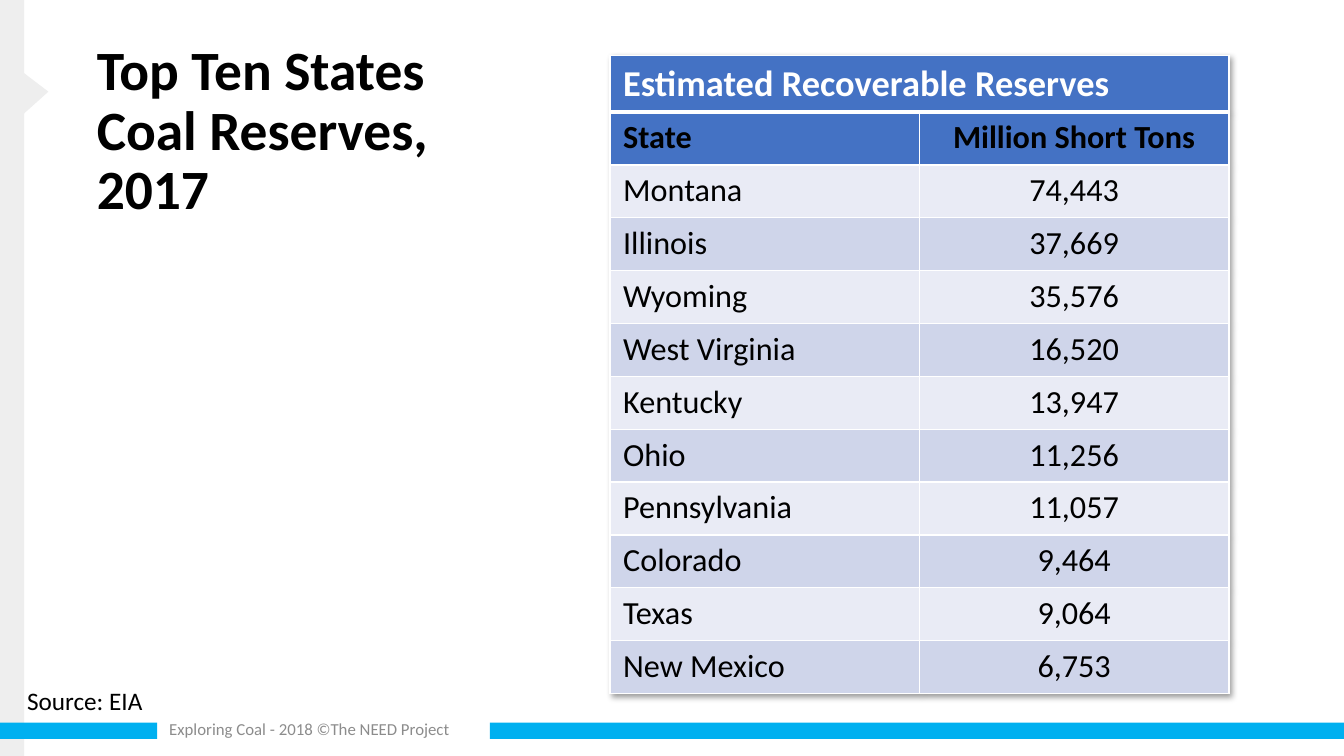
from lxml import etree
from pptx import Presentation, util as u
from pptx.dml.color import RGBColor
from pptx.enum import shapes, text
from pptx.oxml import parse_xml
from pptx.oxml.ns import nsdecls, qn

WIDTH, HEIGHT = 13.33, 7.5
BAR_TOP, BAR_HEIGHT = 7.17, 0.16
GREY, CYAN, BLUE, WHITE, BLACK = "EEEEEE", "00B0F0", "4472C4", "FFFFFF", "000000"
BANDS = ("E9EBF5", "CFD5EA")
LEFT, CENTER = text.PP_ALIGN.LEFT, text.PP_ALIGN.CENTER
TOP, MIDDLE = text.MSO_ANCHOR.TOP, text.MSO_ANCHOR.MIDDLE

RESERVES = [
    ("Montana", "74,443"),
    ("Illinois", "37,669"),
    ("Wyoming", "35,576"),
    ("West Virginia", "16,520"),
    ("Kentucky", "13,947"),
    ("Ohio", "11,256"),
    ("Pennsylvania", "11,057"),
    ("Colorado", "9,464"),
    ("Texas", "9,064"),
    ("New Mexico", "6,753"),
]


def color(value):
    return RGBColor.from_string(value)


def inches(*lengths):
    return [u.Inches(length) for length in lengths]


def write(frame, words, size, ink=BLACK, bold=False, align=LEFT, spacing=1.0):
    frame.text = words
    paragraph = frame.paragraphs[0]
    paragraph.alignment = align
    paragraph.line_spacing = spacing
    font = paragraph.runs[0].font
    font.name, font.size, font.bold = "Calibri", u.Pt(size), bold
    font.color.rgb = color(ink)


def paint(shape, fill):
    shape.shadow.inherit = False
    shape.fill.solid()
    shape.fill.fore_color.rgb = color(fill)
    shape.line.fill.background()


def add_side_strip(slide, left, top, width, height):
    """Grey edge strip with a pointer towards the title."""
    strip = slide.shapes.add_shape(
        shapes.MSO_SHAPE.RECTANGLE, *inches(left, top, width, height))
    paint(strip, GREY)
    base, tip = left + 0.1, left + 2 * width
    outline = slide.shapes.build_freeform(*inches(base, top + 1.25), scale=1.0)
    outline.add_line_segments(
        [inches(base, top + 0.62), inches(tip, top + 0.91)], close=True)
    paint(outline.convert_to_shape(), GREY)


def add_label(slide, words, left, top, width, height, anchor=TOP, wrap=True, **style):
    frame = slide.shapes.add_textbox(*inches(left, top, width, height)).text_frame
    frame.word_wrap = wrap
    frame.vertical_anchor = anchor
    write(frame, words, **style)


def add_footer(slide, left, width):
    """Cyan bars on both sides of the footer text."""
    gap_end = left + width
    for start, end in ((0, left - 0.02), (gap_end, WIDTH)):
        bar = slide.shapes.add_shape(
            shapes.MSO_SHAPE.RECTANGLE,
            *inches(start, BAR_TOP, end - start, BAR_HEIGHT))
        paint(bar, CYAN)
    add_label(slide, "Exploring Coal - 2018 ©The NEED Project",
              left, 7.03, width, 0.4, anchor=MIDDLE, size=12, ink="8C8C8C")


def set_title(slide, words, left, top, width, height):
    title = slide.shapes.title
    title.left, title.top, title.width, title.height = inches(left, top, width, height)
    frame = title.text_frame
    frame.word_wrap = True
    frame.auto_size = text.MSO_AUTO_SIZE.NONE
    frame.vertical_anchor = MIDDLE
    write(frame, words, 39.6, bold=True, spacing=0.9)


def set_borders(cell, **points):
    properties = cell._tc.get_or_add_tcPr()
    for side in "LRTB":
        line = etree.SubElement(properties, qn(f"a:ln{side}"),
                                w=str(u.Pt(points.get(side, 1))))
        fill = etree.SubElement(line, qn("a:solidFill"))
        etree.SubElement(fill, qn("a:srgbClr"), val=WHITE)


def fill_cell(cell, words, fill, borders, **style):
    cell.margin_left = cell.margin_right = u.Inches(0.13)
    cell.margin_top = cell.margin_bottom = u.Inches(0.06)
    set_borders(cell, **borders)
    cell.fill.solid()
    cell.fill.fore_color.rgb = color(fill)
    if words:
        write(cell.text_frame, words, **style)


def add_table_shadow(table):
    table._tbl.tblPr.insert(0, parse_xml(
        f'<a:effectLst {nsdecls("a")}>'
        '<a:outerShdw blurRad="50800" dist="38100" dir="2700000" algn="tl" rotWithShape="0">'
        '<a:srgbClr val="000000"><a:alpha val="40000"/></a:srgbClr>'
        '</a:outerShdw></a:effectLst>'))


def add_reserves_table(slide, left, top, width, height, heading_height=0.56):
    rows = [("Estimated Recoverable Reserves", ""),
            ("State", "Million Short Tons"), *RESERVES]
    table = slide.shapes.add_table(
        len(rows), 2, *inches(left, top, width, height)).table
    table.first_row = table.horz_banding = False
    add_table_shadow(table)
    for column in table.columns:
        column.width = u.Inches(width / 2)
    row_height = (height - heading_height) / (len(rows) - 1)
    for r, row in enumerate(rows):
        table.rows[r].height = u.Inches(row_height if r else heading_height)
        fill = BLUE if r < 2 else BANDS[r % 2]
        borders = {0: {"B": 3}, 1: {"T": 3}}.get(r, {})
        for c, words in enumerate(row):
            fill_cell(table.cell(r, c), words, fill, borders,
                      size=23 if r else 26, ink=BLACK if r else WHITE,
                      bold=r < 2, align=CENTER if c else LEFT)
    table.cell(0, 0).merge(table.cell(0, 1))


def main():
    deck = Presentation()
    deck.slide_width, deck.slide_height = inches(WIDTH, HEIGHT)
    slide = deck.slides.add_slide(deck.slide_layouts.get_by_name("Title Only"))
    add_side_strip(slide, 0, 0, 0.24, HEIGHT)
    set_title(slide, "Top Ten States Coal Reserves, 2017", 0.86, 0.55, 3.99, 1.52)
    add_reserves_table(slide, 6.05, 0.55, 6.14, 6.33)
    add_label(slide, "Source: EIA", 0.17, 6.75, 1.62, 0.4, wrap=False, size=18)
    add_footer(slide, 1.58, 3.28)
    deck.save("out.pptx")


if __name__ == "__main__":
    main()
